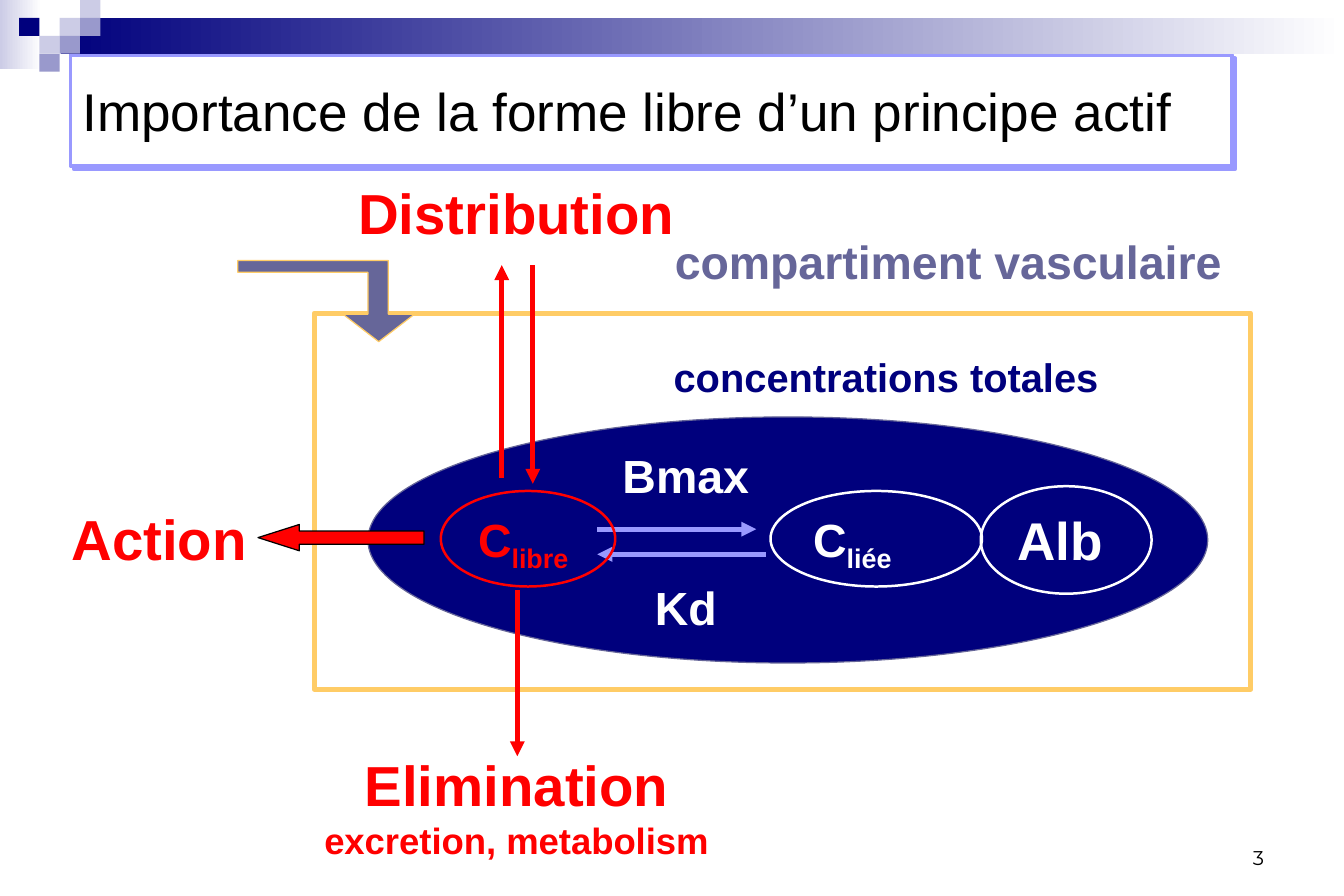
from lxml import etree
from pptx import Presentation
from pptx import util as u
from pptx.dml.color import RGBColor
from pptx.enum import shapes, text
from pptx.oxml.ns import qn

PX = 9144
COLORS = {
    "navy": "00007D", "mist": "CCCCE6", "lilac": "9999CC", "violet": "9999FF",
    "slate": "666699", "gold": "FFCC66", "red": "FF0000", "white": "FFFFFF", "black": "000000",
}
SHAPE = shapes.MSO_SHAPE
ALIGN = text.PP_ALIGN
ANCHOR = text.MSO_ANCHOR


def rgb(name):
    return RGBColor.from_string(COLORS[name])


def px(*lengths):
    return [n * PX for n in lengths]


def within(box, x, y, w, h):
    return box[0] + x, box[1] + y, w, h


def add_run(p, words, size=28, color="black", bold=True, font="Arial", sub=False):
    r = p.add_run()
    r.text = words
    r.font.size, r.font.bold, r.font.name = u.Pt(size), bold, font
    r.font.color.rgb = rgb(color)
    if sub:
        r.font._element.set("baseline", "-25000")


def write(sp, *lines, align=ALIGN.LEFT, anchor=ANCHOR.TOP, wrap=False, gap=0, **fmt):
    tf = sp.text_frame
    tf.word_wrap, tf.vertical_anchor = wrap, anchor
    for i, (words, size) in enumerate(lines):
        p = tf.paragraphs[0] if i == 0 else tf.add_paragraph()
        p.alignment = align
        p.space_before = u.Pt(gap if i else 0)
        add_run(p, words, size=size, **fmt)
    return tf


def label(s, box, *lines, **fmt):
    return write(s.shapes.add_textbox(*px(*box)), *lines, **fmt)


def paint(sp, fill=None, line=None, width=0.75):
    sp.shadow.inherit = False
    if fill:
        sp.fill.solid()
        sp.fill.fore_color.rgb = rgb(fill)
    else:
        sp.fill.background()
    if line:
        sp.line.color.rgb = rgb(line)
        sp.line.width = u.Pt(width)
    else:
        sp.line.fill.background()


def shape(s, kind, box, **look):
    sp = s.shapes.add_shape(kind, *px(*box))
    paint(sp, **look)
    return sp


def fade(s, box, start, end):
    sp = shape(s, SHAPE.RECTANGLE, box)
    sp.fill.gradient()
    sp.fill.gradient_angle = 0
    for stop, color, position in zip(sp.fill.gradient_stops, (start, end), (0, 1)):
        stop.color.rgb = rgb(color)
        stop.position = position


def arrow(s, box, x1, y1, x2, y2, color):
    x, y = box[:2]
    c = s.shapes.add_connector(shapes.MSO_CONNECTOR.STRAIGHT, *px(x + x1, y + y1, x + x2, y + y2))
    c.line.color.rgb = rgb(color)
    c.line.width = u.Pt(3)
    etree.SubElement(c.line._get_or_add_ln(), qn("a:tailEnd"), type="triangle")
    etree.SubElement(c._element.spPr, qn("a:effectLst"))


def header(s, box):
    fade(s, within(box, 0, 0, 35, 58), "mist", "white")
    fade(s, within(box, 51, 15, box[2] - 51, 30), "navy", "white")
    squares = [(2, 1, "mist"), (3, 0, "mist"), (3, 1, "lilac"), (1, 2, "mist"),
               (0, 1, "navy"), (2, 2, "lilac"), (1, 3, "lilac")]
    for col, row, color in squares:
        shape(s, SHAPE.RECTANGLE, within(box, 16 + 17 * col, 15 * row, 17, 15), fill=color)


def title(s, box):
    sp = s.shapes.title
    sp.left, sp.top, sp.width, sp.height = px(*box)
    paint(sp, fill="white", line="violet", width=2.25)
    shadow = etree.SubElement(sp._element.spPr.find(qn("a:effectLst")), qn("a:outerShdw"),
                              dist="35560", dir="2700000", algn="ctr", rotWithShape="0")
    etree.SubElement(shadow, qn("a:srgbClr"), val=COLORS["violet"])
    tf = write(sp, ("Importance de la forme libre d’un principe actif", 32),
               anchor=ANCHOR.MIDDLE, wrap=True, bold=False)
    tf.auto_size = text.MSO_AUTO_SIZE.NONE


def compartment(s, box):
    shape(s, SHAPE.OVAL, within(box, 45, 87, 703, 206), fill="navy", line="slate")
    shape(s, SHAPE.RECTANGLE, box, line="gold", width=3)
    label(s, within(box, 292, -72, 490, 57), ("compartiment vasculaire", 28), color="slate")
    label(s, within(box, 291, 28, 385, 50), ("concentrations totales", 24), color="navy")
    label(s, within(box, 248, 107, 126, 163), ("Bmax", 28), ("Kd", 28),
          align=ALIGN.CENTER, gap=46, color="white")
    arrow(s, box, 237, 181, 370, 181, "violet")
    arrow(s, box, 378, 202, 237, 202, "violet")
    ovals = [((106, 149, 146, 80), "C", "libre", 28, "red"),
             ((382, 149, 177, 80), "C", "liée", 28, "white"),
             ((558, 145, 143, 90), "Alb", None, 32, "white")]
    for place, name, index, size, color in ovals:
        sp = shape(s, SHAPE.OVAL, within(box, *place), line=color, width=1.5)
        tf = write(sp, (name, size), wrap=True, color=color)
        if index:
            add_run(tf.paragraphs[0], index, size=size, color=color, sub=True)


def entry_arrow(s, box):
    x, y = box[:2]
    corners = [(118, 68), (88, 45), (109, 45), (109, 10), (0, 10), (0, 0), (126, 0), (126, 45), (148, 45)]
    points = [(x + dx, y + dy) for dx, dy in corners]
    outline = s.shapes.build_freeform(*points[0], scale=PX)
    outline.add_line_segments(points[1:], close=True)
    paint(outline.convert_to_shape(), fill="slate", line="gold")


def fates(s, box):
    label(s, within(box, 240, 0, 285, 67), ("Distribution", 34), color="red")
    label(s, within(box, 0, 273, 167, 67), ("Action", 34), color="red")
    label(s, within(box, 211, 479, 343, 103), ("Elimination", 34), ("excretion, metabolism", 22),
          align=ALIGN.CENTER, color="red")
    for ends in [(370, 256, 370, 78), (396, 78, 396, 261), (383, 350, 383, 489)]:
        arrow(s, box, *ends, "red")
    sp = shape(s, SHAPE.LEFT_ARROW, within(box, 166, 295, 139, 22), fill="red", line="black")
    sp.adjustments[1] = 1.57


def page_number(s, box):
    label(s, box, ("3", 12), align=ALIGN.RIGHT, anchor=ANCHOR.BOTTOM, wrap=True,
          bold=False, font="Montserrat")


def main():
    prs = Presentation()
    prs.slide_width, prs.slide_height = px(1125, 750)
    s = prs.slides.add_slide(prs.slide_layouts[5])
    header(s, (0, 0, 1125, 60))
    title(s, (59, 46, 972, 93))
    compartment(s, (263, 262, 784, 315))
    fates(s, (50, 144, 554, 582))
    entry_arrow(s, (199, 218, 148, 68))
    page_number(s, (806, 683, 262, 50))
    prs.save("out.pptx")


if __name__ == "__main__":
    main()
